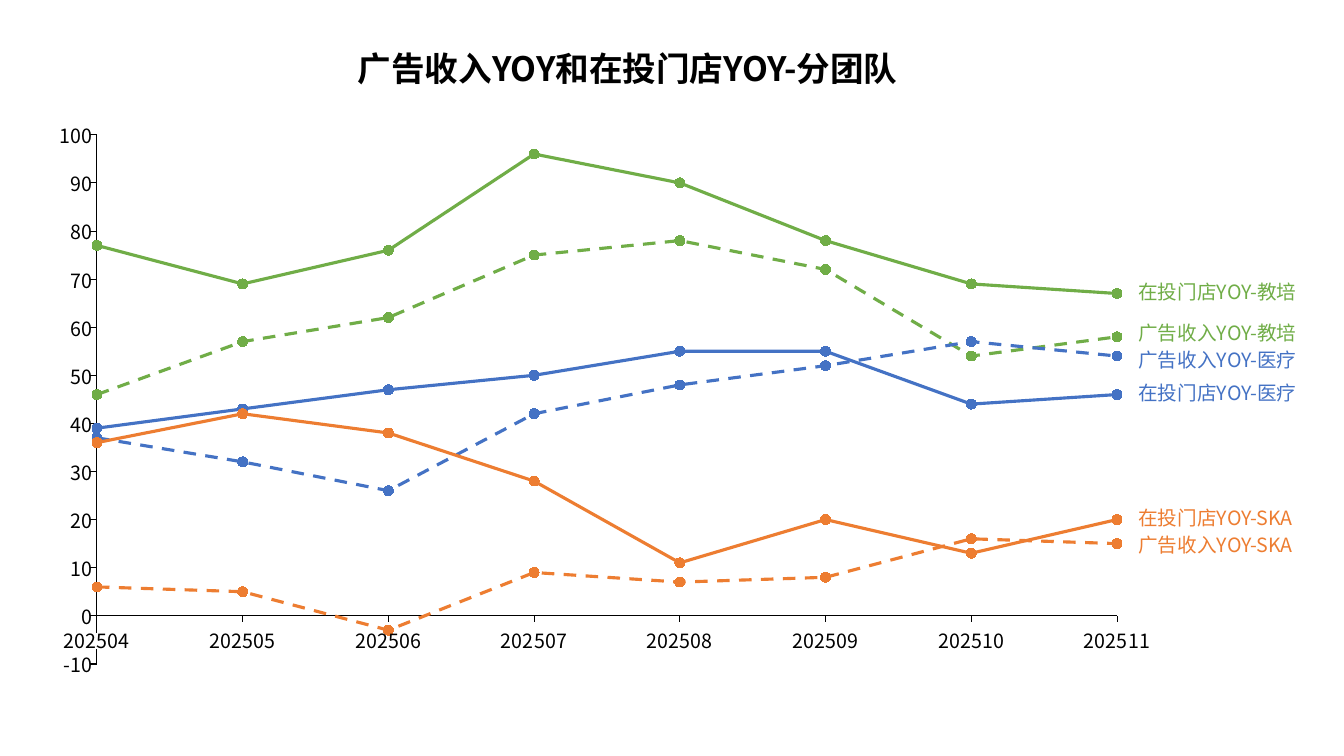
from collections import namedtuple

from lxml import etree
from pptx import Presentation
from pptx.chart.data import XyChartData
from pptx.dml.color import RGBColor
from pptx.enum.chart import (XL_AXIS_CROSSES, XL_CHART_TYPE, XL_MARKER_STYLE,
                             XL_TICK_LABEL_POSITION, XL_TICK_MARK)
from pptx.enum.dml import MSO_LINE
from pptx.enum.shapes import MSO_CONNECTOR
from pptx.enum.text import MSO_ANCHOR, PP_ALIGN
from pptx.oxml.ns import qn
from pptx.util import Inches, Pt

Box = namedtuple("Box", "left top width height")
Team = namedtuple("Team", "name color dashed label_top values")

FONT = "Noto Sans CJK SC"
BLACK, ORANGE, BLUE, GREEN = "000000", "ED7D31", "4472C4", "70AD47"
LOW, HIGH, STEP = -10, 100, 10
MONTHS = range(202504, 202512)
TITLE_BOX = Box(3.11, 0.47, 6.23, 0.47)
CHART_BOX = Box(0.33, 1.11, 11.28, 5.7)
PLOT_SHARES = Box(0.056, 0.04, 0.897, 0.921)
LABEL_LEFT, LABEL_WIDTH, LABEL_HEIGHT = 11.29, 1.9, 0.21
TICK = 0.07

TEAMS = [
    Team("广告收入YOY-SKA", ORANGE, True, 5.31, (6, 5, -3, 9, 7, 8, 16, 15)),
    Team("在投门店YOY-SKA", ORANGE, False, 5.05, (36, 42, 38, 28, 11, 20, 13, 20)),
    Team("广告收入YOY-医疗", BLUE, True, 3.48, (37, 32, 26, 42, 48, 52, 57, 54)),
    Team("在投门店YOY-医疗", BLUE, False, 3.81, (39, 43, 47, 50, 55, 55, 44, 46)),
    Team("广告收入YOY-教培", GREEN, True, 3.21, (46, 57, 62, 75, 78, 72, 54, 58)),
    Team("在投门店YOY-教培", GREEN, False, 2.8, (77, 69, 76, 96, 90, 78, 69, 67)),
]


def rgb(color):
    return RGBColor.from_string(color)


def style_font(font, size, color=BLACK, bold=False):
    font.name, font.size, font.bold = FONT, Pt(size), bold
    font.color.rgb = rgb(color)


def add_text(page, box, text, size, color=BLACK, bold=False,
             align=PP_ALIGN.LEFT, wrap=False):
    frame = page.shapes.add_textbox(*map(Inches, box)).text_frame
    frame.margin_left = frame.margin_right = 0
    frame.margin_top = frame.margin_bottom = 0
    frame.vertical_anchor = MSO_ANCHOR.MIDDLE
    frame.word_wrap = wrap
    para = frame.paragraphs[0]
    para.text, para.alignment, para.line_spacing = text, align, 0.9
    style_font(para.font, size, color, bold)
    # East Asian glyphs take their own typeface element
    for span in para.runs:
        properties = span._r.get_or_add_rPr()
        etree.SubElement(properties, qn("a:ea")).set("typeface", FONT)


def add_line(page, left, top, right, bottom):
    line = page.shapes.add_connector(
        MSO_CONNECTOR.STRAIGHT, *map(Inches, (left, top, right, bottom)))
    line.line.color.rgb = rgb(BLACK)
    line.line.width = Pt(0.75)
    etree.SubElement(line._element.spPr, qn("a:effectLst"))


def plot_box(box):
    """Return the inner plot area, in inches, of a chart in the given box."""
    return Box(box.left + PLOT_SHARES.left * box.width,
               box.top + PLOT_SHARES.top * box.height,
               PLOT_SHARES.width * box.width,
               PLOT_SHARES.height * box.height)


def add_value_axis(page, plot):
    """Draw the vertical axis, open where the first month label sits."""
    bottom = plot.top + plot.height
    add_line(page, plot.left, plot.top, plot.left, bottom - 0.31)
    add_line(page, plot.left, bottom - 0.15, plot.left, bottom)
    for value in range(LOW, HIGH + 1, STEP):
        y = bottom - (value - LOW) / (HIGH - LOW) * plot.height
        add_line(page, plot.left - TICK, y, plot.left, y)


def set_plot_layout(chart):
    area = chart._chartSpace.chart.plotArea
    for old in area.findall(qn("c:layout")):
        area.remove(old)
    layout = etree.Element(qn("c:layout"))
    manual = etree.SubElement(layout, qn("c:manualLayout"))
    settings = [("layoutTarget", "inner"), ("xMode", "edge"), ("yMode", "edge")]
    settings += zip("xywh", PLOT_SHARES)
    for tag, value in settings:
        etree.SubElement(manual, qn("c:" + tag)).set("val", str(value))
    area.insert(0, layout)


def style_axis(axis, low, high, step, number_format, tick):
    axis.minimum_scale, axis.maximum_scale, axis.major_unit = low, high, step
    axis.has_major_gridlines = axis.has_minor_gridlines = False
    axis.major_tick_mark, axis.minor_tick_mark = tick, XL_TICK_MARK.NONE
    axis.tick_label_position = XL_TICK_LABEL_POSITION.NEXT_TO_AXIS
    axis.tick_labels.number_format = number_format
    axis.tick_labels.number_format_is_linked = False
    style_font(axis.tick_labels.font, 14)


def style_series(series, team):
    line = series.format.line
    line.color.rgb, line.width = rgb(team.color), Pt(2.25)
    line.dash_style = MSO_LINE.DASH if team.dashed else MSO_LINE.SOLID
    marker = series.marker
    marker.style, marker.size = XL_MARKER_STYLE.CIRCLE, 7
    marker.format.fill.solid()
    marker.format.fill.fore_color.rgb = rgb(team.color)
    marker.format.line.color.rgb = rgb(team.color)


def add_growth_chart(page, box):
    data = XyChartData()
    for team in TEAMS:
        series = data.add_series(team.name)
        for month, value in zip(MONTHS, team.values):
            series.add_data_point(month, value)
    chart = page.shapes.add_chart(
        XL_CHART_TYPE.XY_SCATTER_LINES, *map(Inches, box), data).chart
    chart.has_title = chart.has_legend = False
    style_font(chart.font, 10)
    set_plot_layout(chart)
    months, values = chart.category_axis, chart.value_axis
    style_axis(months, MONTHS[0], MONTHS[-1], 1, '0;"-"0', XL_TICK_MARK.OUTSIDE)
    style_axis(values, LOW, HIGH, STEP, '#,##0;"-"#,##0', XL_TICK_MARK.NONE)
    months.crosses = XL_AXIS_CROSSES.MINIMUM
    months.format.line.color.rgb = rgb(BLACK)
    months.format.line.width = Pt(0.75)
    values.format.line.fill.background()
    plot = chart.plots[0]
    plot.vary_by_categories = False
    for series, team in zip(plot.series, TEAMS):
        style_series(series, team)


def add_team_labels(page):
    for team in TEAMS:
        box = Box(LABEL_LEFT, team.label_top, LABEL_WIDTH, LABEL_HEIGHT)
        add_text(page, box, team.name, 14, team.color)


def main():
    deck = Presentation()
    deck.slide_width, deck.slide_height = Inches(13.33), Inches(7.5)
    page = deck.slides.add_slide(deck.slide_layouts[6])
    add_text(page, TITLE_BOX, "广告收入YOY和在投门店YOY-分团队", 24, bold=True,
             align=PP_ALIGN.CENTER, wrap=True)
    add_value_axis(page, plot_box(CHART_BOX))
    add_growth_chart(page, CHART_BOX)
    add_team_labels(page)
    deck.save("out.pptx")


if __name__ == "__main__":
    main()
